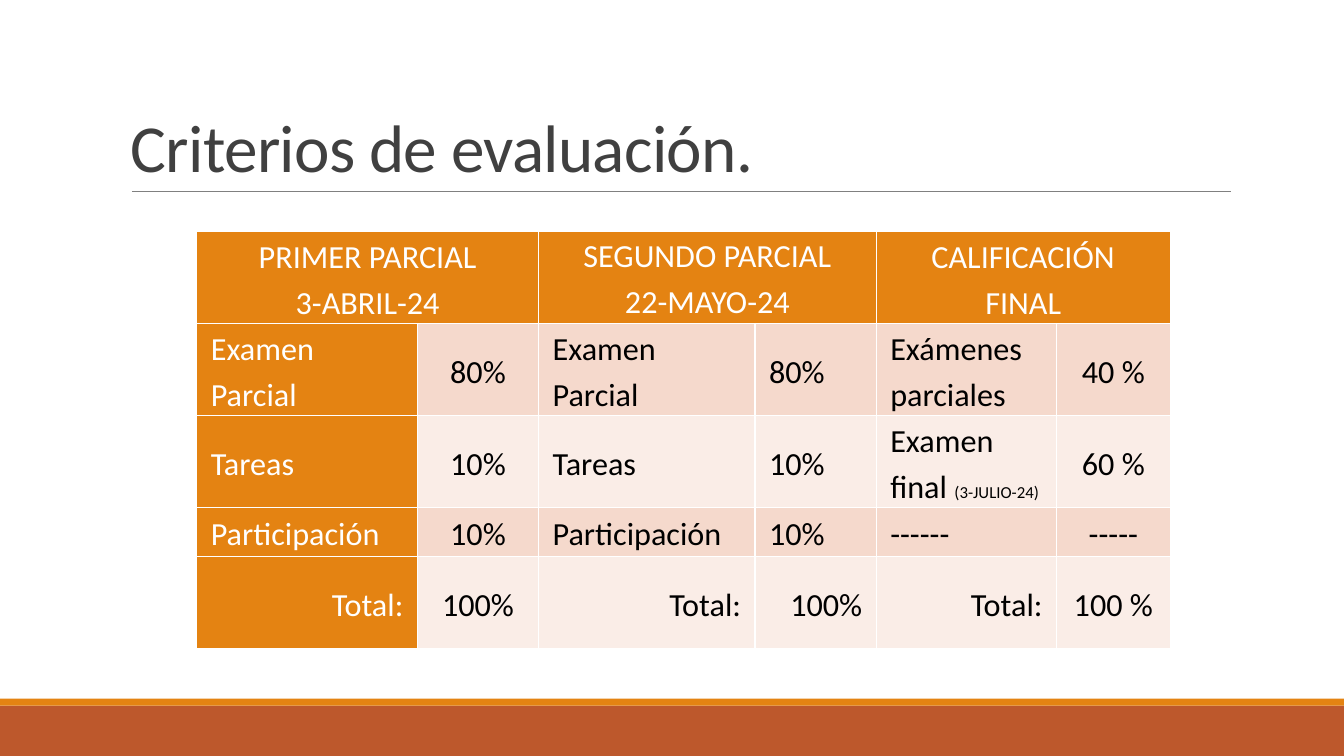
from lxml import etree
from pptx import Presentation
from pptx.dml.color import RGBColor
from pptx.enum import shapes, text
from pptx.oxml import ns
from pptx.util import Pt

TITLE = "Criterios de evaluación."
HEADINGS = ["PRIMER PARCIAL\n3-ABRIL-24", "SEGUNDO PARCIAL\n22-MAYO-24", "CALIFICACIÓN FINAL"]
CRITERIA = [
    ["Examen Parcial", "80%", "Examen Parcial", "80%", "Exámenes parciales", "40 %"],
    ["Tareas", "10%", "Tareas", "10%", "Examen final ", "60 %"],
    ["Participación", "10%", "Participación", "10%", "------", "-----"],
    ["Total:", "100%", "Total:", "100%", "Total:", "100 %"],
]
FINAL_EXAM_CELL = (2, 4)
FINAL_EXAM_DATE = "(3-JULIO-24)"

FONT = "Calibri"
WHITE = RGBColor(0xFF, 0xFF, 0xFF)
BLACK = RGBColor(0, 0, 0)
DARK = RGBColor(0x40, 0x40, 0x40)
GRAY = RGBColor(0x80, 0x80, 0x80)
ORANGE = RGBColor(0xE4, 0x83, 0x12)
RUST = RGBColor(0xBD, 0x58, 0x2C)
BANDS = [RGBColor(0xF5, 0xD9, 0xCC), RGBColor(0xFA, 0xED, 0xE7)]

WIDTH, HEIGHT = 960, 540
FOOTER = [(504, 36, RUST), (499, 5, ORANGE)]
COLUMNS = [157.6, 86.6, 154.6, 86.6, 128.8, 81.2]
ROWS = [65.8, 65.8, 65.8, 34.8, 65.8]
LEFT, CENTER, RIGHT = text.PP_ALIGN.LEFT, text.PP_ALIGN.CENTER, text.PP_ALIGN.RIGHT
CRITERIA_ALIGN = [LEFT, CENTER, LEFT, LEFT, LEFT, CENTER]
TOTAL_ALIGN = [RIGHT, CENTER, RIGHT, RIGHT, RIGHT, CENTER]
CELL_FORMAT = {"margin_left": Pt(10), "margin_right": Pt(10), "margin_top": 0,
               "margin_bottom": 0, "vertical_anchor": text.MSO_ANCHOR.MIDDLE}


def apply(target, **values):
    for name, value in values.items():
        setattr(target, name, value)


def style_run(run, size, color):
    apply(run.font, name=FONT, size=Pt(size))
    run.font.color.rgb = color


def add_borders(cell):
    """Put thin white lines on all four sides, ahead of the cell's fill."""
    properties = cell._tc.get_or_add_tcPr()
    for position, side in enumerate("LRTB"):
        line = etree.Element(ns.qn(f"a:ln{side}"), w=str(Pt(1)))
        fill = etree.SubElement(line, ns.qn("a:solidFill"))
        etree.SubElement(fill, ns.qn("a:srgbClr"), val=str(WHITE))
        properties.insert(position, line)


def fill_cell(cell, wording, align, background, color):
    cell.text = wording
    apply(cell, **CELL_FORMAT)
    for paragraph in cell.text_frame.paragraphs:
        apply(paragraph, alignment=align, line_spacing=1.15)
        for run in paragraph.runs:
            style_run(run, 23, color)
    cell.fill.solid()
    cell.fill.fore_color.rgb = background
    add_borders(cell)


def add_backdrop(slide):
    for top, height, color in FOOTER:
        bar = slide.shapes.add_shape(shapes.MSO_SHAPE.RECTANGLE, 0, Pt(top), Pt(WIDTH), Pt(height))
        bar.shadow.inherit = False
        bar.fill.solid()
        bar.fill.fore_color.rgb = color
        bar.line.fill.background()
    rule = slide.shapes.add_connector(shapes.MSO_CONNECTOR.STRAIGHT,
                                      Pt(94.3), Pt(136.8), Pt(879), Pt(136.8))
    rule.line.color.rgb = GRAY
    rule.line.width = Pt(0.5)
    etree.SubElement(rule._element.spPr, ns.qn("a:effectLst"))


def add_title(slide):
    frame = slide.shapes.add_textbox(Pt(86.4), Pt(22.5), Pt(792), Pt(114.3)).text_frame
    apply(frame, word_wrap=True, vertical_anchor=text.MSO_ANCHOR.BOTTOM)
    paragraph = frame.paragraphs[0]
    paragraph.line_spacing = 0.85
    run = paragraph.add_run()
    run.text = TITLE
    style_run(run, 48, DARK)
    run.font._element.set("spc", "-50")


def add_criteria_table(slide):
    table = slide.shapes.add_table(len(ROWS), len(COLUMNS), Pt(140.6), Pt(165.2),
                                   Pt(sum(COLUMNS)), Pt(sum(ROWS))).table
    for column, width in zip(table.columns, COLUMNS):
        column.width = Pt(width)
    for row, height in zip(table.rows, ROWS):
        row.height = Pt(height)

    for i, heading in enumerate(HEADINGS):
        first, second = table.cell(0, 2 * i), table.cell(0, 2 * i + 1)
        first.merge(second)
        fill_cell(first, heading, CENTER, ORANGE, WHITE)
        add_borders(second)
    table.cell(0, 2).vertical_anchor = text.MSO_ANCHOR.TOP

    for r, criteria in enumerate(CRITERIA, 1):
        aligns = TOTAL_ALIGN if r == len(CRITERIA) else CRITERIA_ALIGN
        for c, (wording, align) in enumerate(zip(criteria, aligns)):
            background, color = (BANDS[(r - 1) % 2], BLACK) if c else (ORANGE, WHITE)
            fill_cell(table.cell(r, c), wording, align, background, color)

    exam_date = table.cell(*FINAL_EXAM_CELL).text_frame.paragraphs[0].add_run()
    exam_date.text = FINAL_EXAM_DATE
    style_run(exam_date, 12, BLACK)


def main():
    deck = Presentation()
    apply(deck, slide_width=Pt(WIDTH), slide_height=Pt(HEIGHT))
    slide = deck.slides.add_slide(deck.slide_layouts[6])
    add_backdrop(slide)
    add_title(slide)
    add_criteria_table(slide)
    deck.save("out.pptx")


if __name__ == "__main__":
    main()
